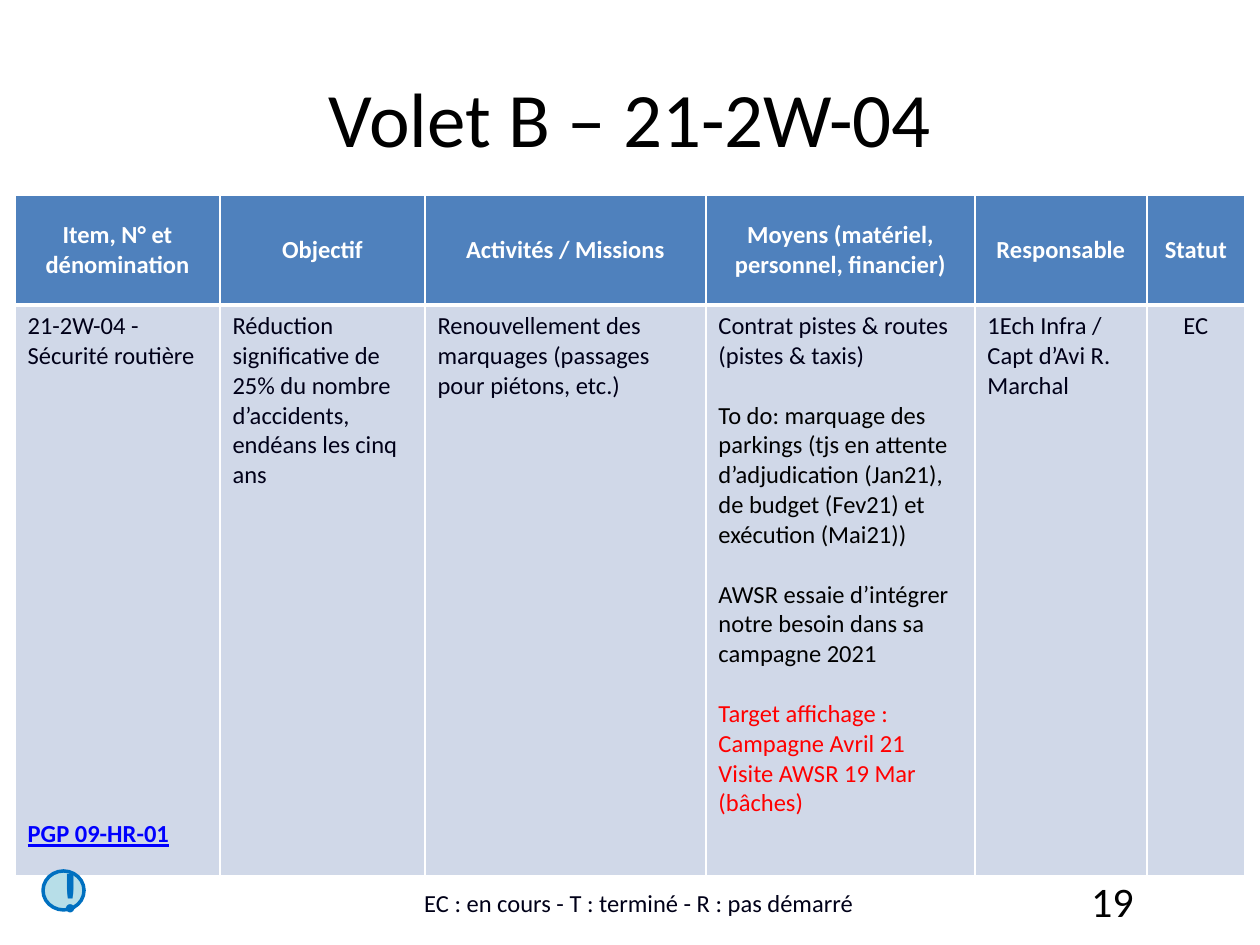
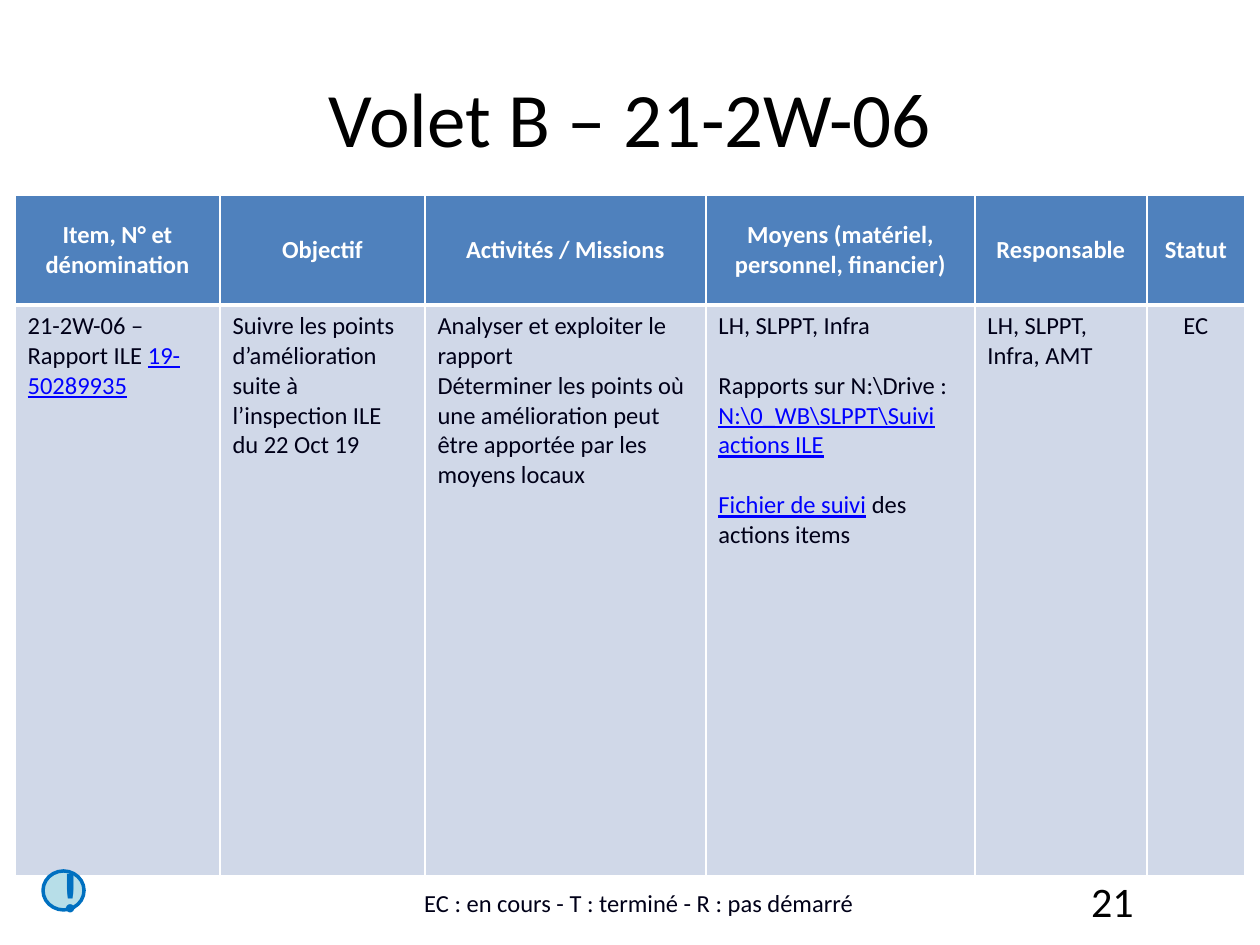
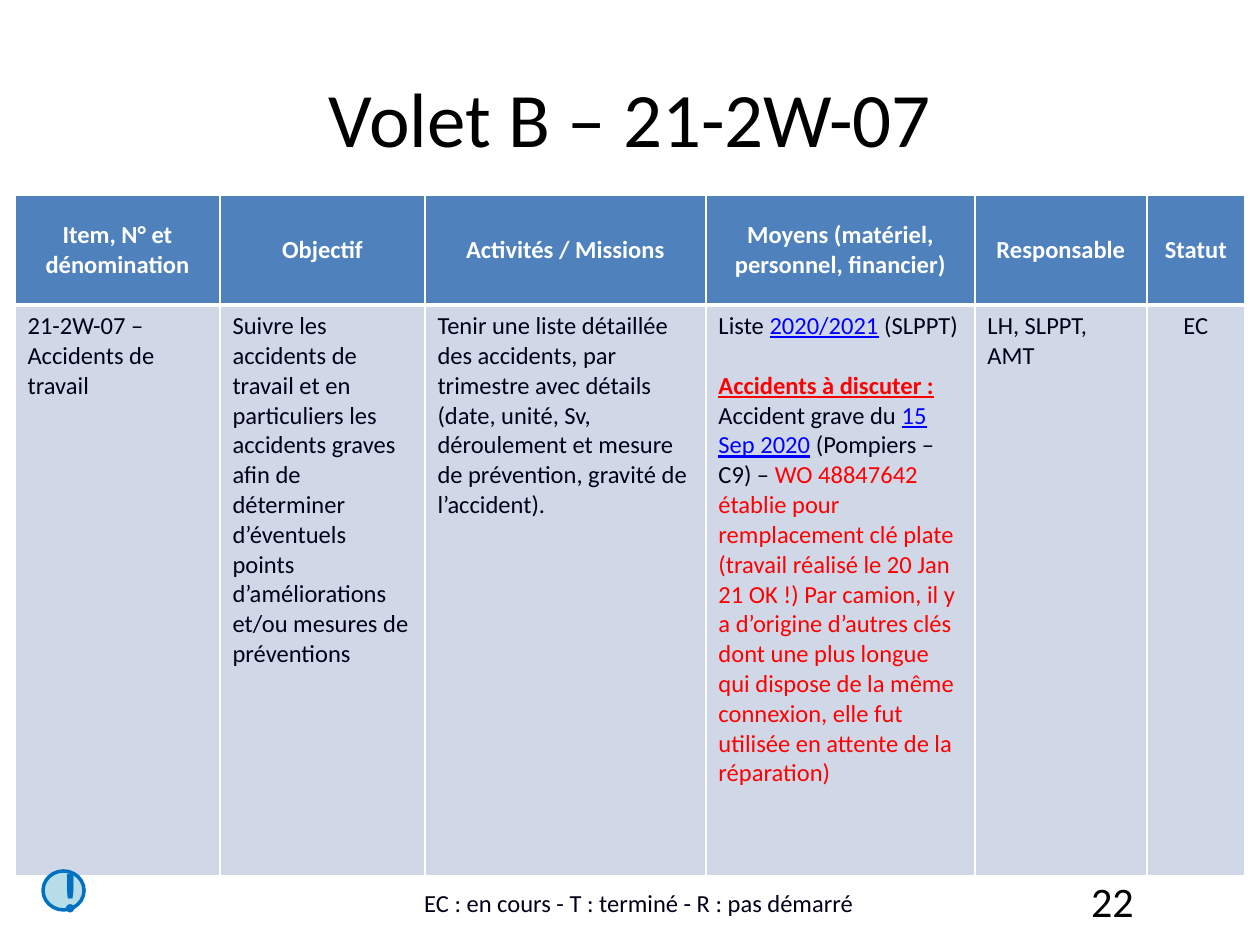
from lxml import etree
from pptx import Presentation
from pptx.dml.color import RGBColor as RGB
from pptx.enum.shapes import MSO_SHAPE as SHAPE
from pptx.enum.text import MSO_ANCHOR as ANCHOR, PP_ALIGN as ALIGN
from pptx.oxml.ns import qn
from pptx.util import Emu, Pt

COLORS = {
    "black": "000000",
    "white": "FFFFFF",
    "ink": "000018",
    "red": "FF0000",
    "link": "0000FF",
    "header": "4F81BD",
    "body": "D0D8E8",
    "badge": "B7DEE8",
    "accent": "0070C0",
}
STYLES = {
    "ink": {"color": "ink"},
    "black": {"color": "black"},
    "red": {"color": "red"},
    "link": {"color": "link", "underline": True},
    "item": {"color": "link", "bold": True, "underline": True},
    "alert": {"color": "red", "bold": True, "underline": True},
    "header": {"color": "white", "bold": True},
}
FONT = "Calibri"
TEXT_SIZE = 14
LINE_PT = 17.09

SLIDE_BOX = (0, 0, 1260, 945)
TITLE_BOX = (63, 38, 1134, 157)
TABLE_BOX = (15, 195, 1230, 681)
FOOTER_BOX = (0, 870, 1260, 75)
COLUMNS = [205, 205, 281, 269, 172, 98]
HEADER_HEIGHT = 110
HEADERS = [
    "Item, N° et dénomination",
    "Objectif",
    "Activités / Missions",
    "Moyens (matériel, personnel, financier)",
    "Responsable",
    "Statut",
]
LEGEND = "EC : en cours - T : terminé - R : pas démarré"


def px(n):
    return Emu(round(n * 914400 / 126))


def rgb(name):
    return RGB.from_string(COLORS[name])


def para(*runs, gap=0):
    return runs, gap


def ink(text):
    return [para((text, "ink"))]


SHEETS = [
    ("04", "19", [
        [para(("21-2W-04 - Sécurité routière", "ink")),
         para(("PGP 09-HR-01", "item"), gap=15)],
        ink("Réduction significative de 25% du nombre d’accidents, endéans les cinq ans"),
        ink("Renouvellement des marquages (passages pour piétons, etc.)"),
        [para(("Contrat pistes & routes (pistes & taxis)", "ink")),
         para(("To do: marquage des parkings (tjs en attente d’adjudication (Jan21), "
               "de budget (Fev21) et exécution (Mai21))", "black"), gap=1),
         para(("AWSR essaie d’intégrer notre besoin dans sa campagne 2021", "black"), gap=1),
         para(("Target affichage : Campagne Avril 21", "red"), gap=1),
         para(("Visite AWSR 19 Mar (bâches)", "red"))],
        ink("1Ech Infra / Capt d’Avi R. Marchal"),
        ink("EC"),
    ]),
    ("06", "21", [
        [para(("21-2W-06 – Rapport ILE ", "ink"), ("19-50289935", "link"))],
        ink("Suivre les points d’amélioration suite à l’inspection ILE du 22 Oct 19"),
        [para(("Analyser et exploiter le rapport", "ink")),
         para(("Déterminer les points où une amélioration peut être apportée "
               "par les moyens locaux", "ink"))],
        [para(("LH, SLPPT, Infra", "ink")),
         para(("Rapports sur N:\\Drive : ", "ink"),
              ("N:\\0_WB\\SLPPT\\Suivi actions ILE", "link"), gap=1),
         para(("Fichier de suivi", "link"), (" des actions items", "ink"), gap=1)],
        ink("LH, SLPPT, Infra, AMT"),
        ink("EC"),
    ]),
    ("07", "22", [
        ink("21-2W-07 – Accidents de travail"),
        ink("Suivre les accidents de travail et en particuliers les accidents graves afin de "
            "déterminer d’éventuels points d’améliorations et/ou mesures de préventions"),
        ink("Tenir une liste détaillée des accidents, par trimestre avec détails (date, unité, "
            "Sv, déroulement et mesure de prévention, gravité de l’accident)."),
        [para(("Liste ", "ink"), ("2020/2021", "link"), (" (SLPPT)", "ink")),
         para(("Accidents à discuter :", "alert"), gap=1),
         para(("Accident grave du ", "ink"), ("15 Sep 2020", "link"),
              (" (Pompiers – C9) – ", "ink"),
              ("WO 48847642 établie pour remplacement clé plate (travail réalisé le 20 Jan 21 "
               "OK !) Par camion, il y a d’origine d’autres clés dont une plus longue qui "
               "dispose de la même connexion, elle fut utilisée en attente de la réparation)",
               "red"))],
        ink("LH, SLPPT, AMT"),
        ink("EC"),
    ]),
]


def add_run(p, text, size, color, bold=False, underline=False):
    r = p.add_run()
    r.text = text
    font = r.font
    font.name, font.size = FONT, Pt(size)
    font.bold, font.underline = bold, underline
    font.color.rgb = rgb(color)


def write_line(tf, text, size, color, align, anchor, bold=False):
    tf.word_wrap = True
    tf.vertical_anchor = anchor
    p = tf.paragraphs[0]
    p.alignment = align
    add_run(p, text, size, color, bold)


def set_borders(cell, widths):
    tc_pr = cell._tc.get_or_add_tcPr()
    for side, width in zip("LRTB", widths):
        ln = etree.SubElement(tc_pr, qn(f"a:ln{side}"), w=str(Pt(width)))
        fill = etree.SubElement(ln, qn("a:solidFill"))
        etree.SubElement(fill, qn("a:srgbClr"), val=COLORS["white"])


def fill_cell(cell, paras, fill, widths, align, anchor):
    set_borders(cell, widths)
    cell.fill.solid()
    cell.fill.fore_color.rgb = rgb(fill)
    cell.vertical_anchor = anchor
    tf = cell.text_frame
    for i, (runs, gap) in enumerate(paras):
        p = tf.add_paragraph() if i else tf.paragraphs[0]
        p.alignment = align
        if gap:
            p.space_before = Pt(gap * LINE_PT)
        for text, style in runs:
            add_run(p, text, TEXT_SIZE, **STYLES[style])


def add_title(s, box, text):
    sp = s.shapes.title
    sp.left, sp.top, sp.width, sp.height = map(px, box)
    write_line(sp.text_frame, text, 44, "black", ALIGN.CENTER, ANCHOR.MIDDLE)


def add_action_table(s, box, cells):
    table = s.shapes.add_table(2, len(COLUMNS), *map(px, box)).table
    table.horz_banding = False
    for column, width in zip(table.columns, COLUMNS):
        column.width = px(width)
    for row, height in zip(table.rows, (HEADER_HEIGHT, box[3] - HEADER_HEIGHT)):
        row.height = px(height)
    for i, (header, paras) in enumerate(zip(HEADERS, cells)):
        fill_cell(table.cell(0, i), [para((header, "header"))], "header",
                  (1, 1, 1, 3), ALIGN.CENTER, ANCHOR.MIDDLE)
        align = ALIGN.CENTER if header == "Statut" else ALIGN.LEFT
        fill_cell(table.cell(1, i), paras, "body", (1, 1, 3, 1), align, ANCHOR.TOP)


def add_footer(s, box, number):
    x, y = box[:2]
    for left, width, height, text, size, color, align, anchor in (
        (903, 243, 50, number, 24, "black", ALIGN.RIGHT, ANCHOR.MIDDLE),
        (292, 694, 48, LEGEND, TEXT_SIZE, "ink", ALIGN.CENTER, ANCHOR.BOTTOM),
    ):
        sp = s.shapes.add_textbox(px(x + left), px(y + 6), px(width), px(height))
        write_line(sp.text_frame, text, size, color, align, anchor)
    badge = s.shapes.add_shape(SHAPE.FLOWCHART_CONNECTOR, px(x + 43), px(y + 1), px(41), px(39))
    badge.shadow.inherit = False
    badge.fill.solid()
    badge.fill.fore_color.rgb = rgb("badge")
    badge.line.color.rgb = rgb("accent")
    badge.line.width = Pt(2)
    write_line(badge.text_frame, "!", 32, "accent", ALIGN.CENTER, ANCHOR.MIDDLE, bold=True)


def add_sheet(prs, item, number, cells):
    s = prs.slides.add_slide(prs.slide_layouts[5])
    add_title(s, TITLE_BOX, f"Volet B – 21-2W-{item}")
    add_action_table(s, TABLE_BOX, cells)
    add_footer(s, FOOTER_BOX, number)


def main():
    prs = Presentation()
    prs.slide_width, prs.slide_height = map(px, SLIDE_BOX[2:])
    for sheet in SHEETS:
        add_sheet(prs, *sheet)
    prs.save("out.pptx")


if __name__ == "__main__":
    main()
